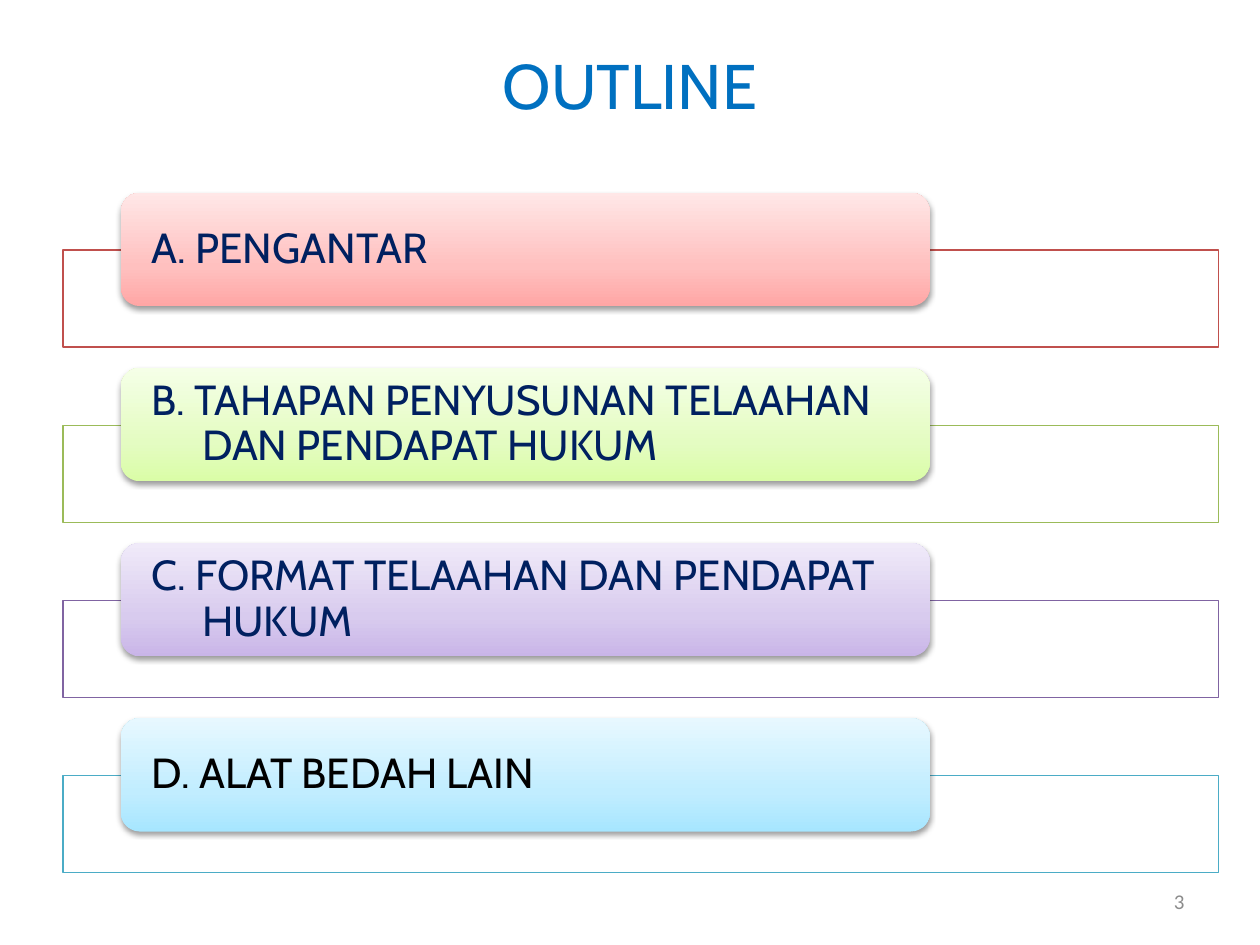
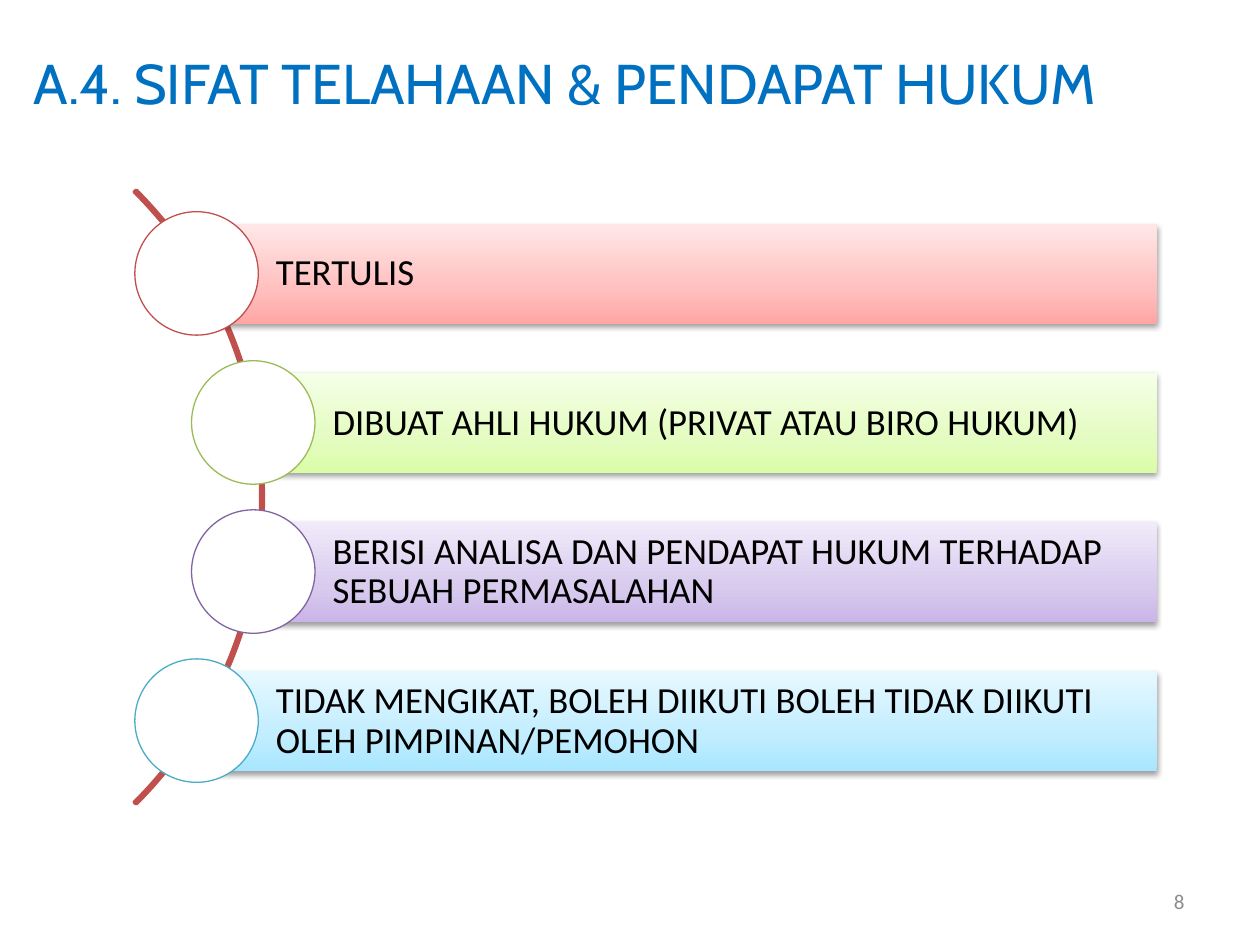
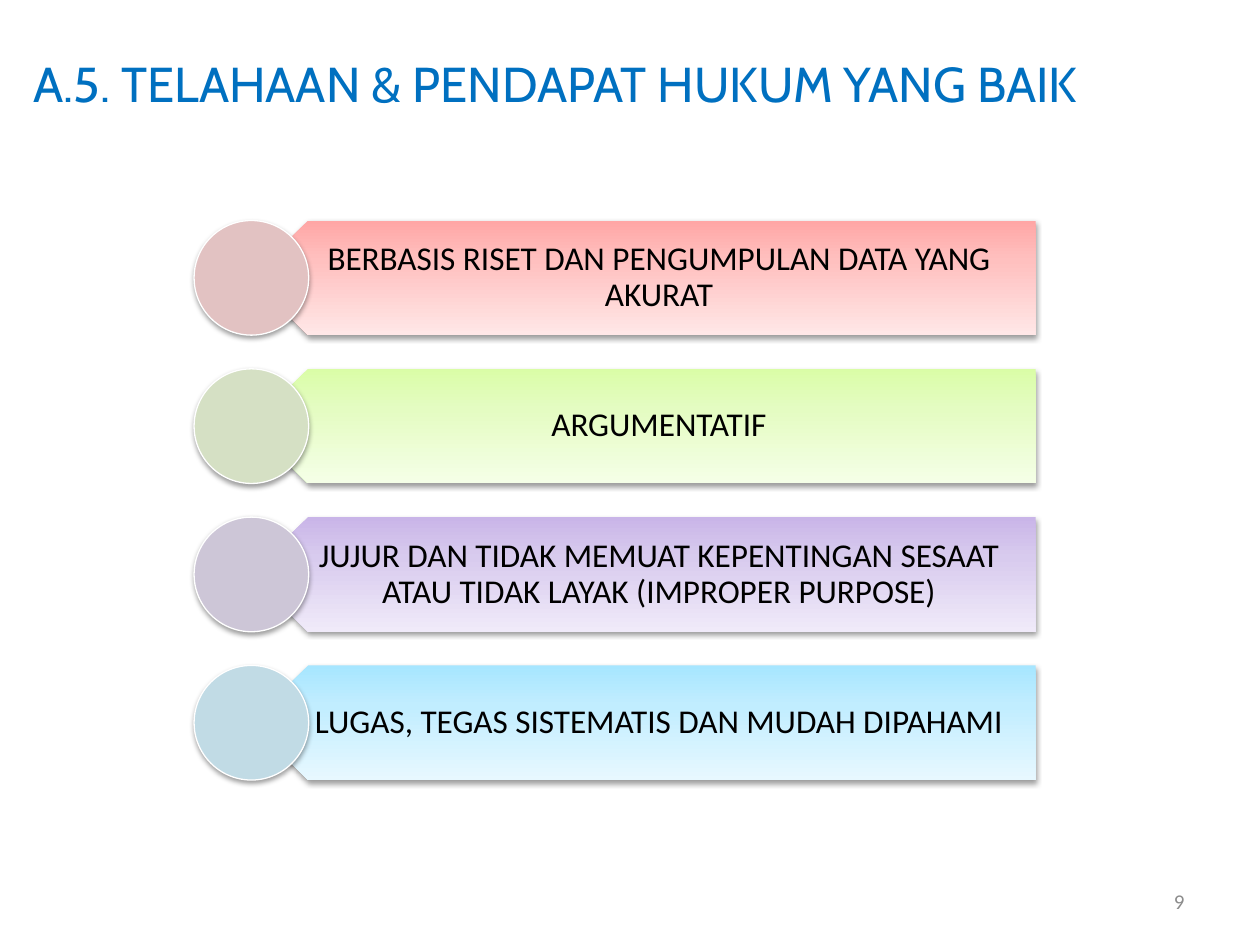
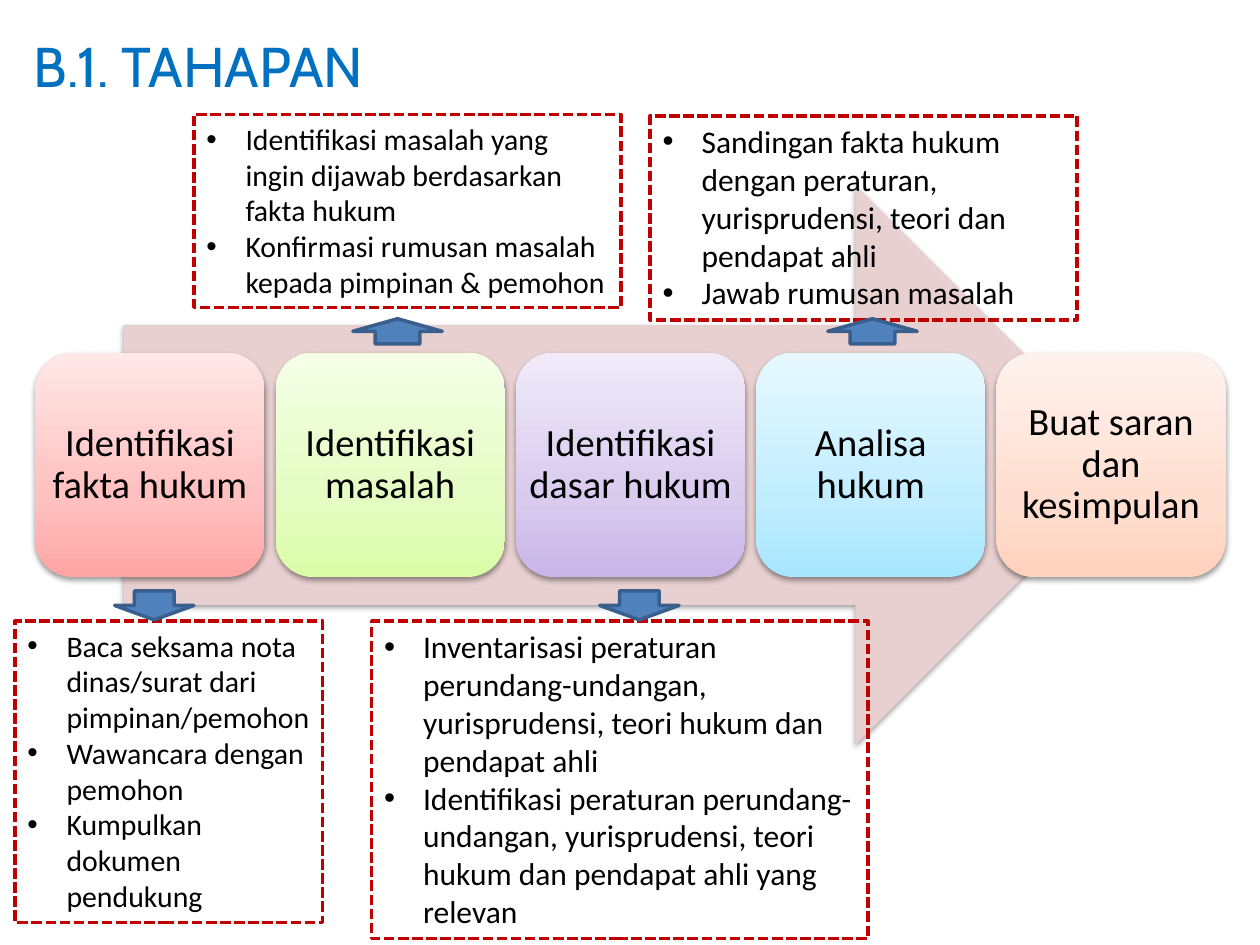
from dataclasses import dataclass

from pptx import Presentation
from pptx.dml.color import RGBColor
from pptx.enum.dml import MSO_LINE
from pptx.enum.shapes import MSO_SHAPE
from pptx.enum.text import MSO_ANCHOR, MSO_AUTO_SIZE, PP_ALIGN
from pptx.oxml import parse_xml
from pptx.oxml.ns import nsdecls, qn
from pptx.util import Inches, Pt


# Theme
@dataclass(frozen=True)
class Accent:
    line: str
    gradient: tuple
    tint: str = "FFFFFF"


@dataclass(frozen=True)
class Theme:
    heading_font: str = "Cabin"
    body_font: str = "Calibri"
    title: str = "0070C0"
    navy: str = "002060"
    black: str = "000000"
    white: str = "FFFFFF"
    gray: str = "8C8C8C"
    note_border: str = "C00000"
    arrow_fill: str = "4F81BD"
    arrow_line: str = "3A5F8C"
    process_arrow: str = "E8D0D0"
    title_large: int = 36
    title_medium: int = 32
    title_small: int = 28
    outline_size: int = 24
    step_size: int = 22
    trait_size: int = 21
    quality_size: int = 19
    note_size: int = 18
    note_small: int = 17
    number_size: int = 12
    thin: float = 0.75
    thick: float = 2
    accents: tuple = (
        Accent("C0504D", ("FFA6A5", "FFC0BF", "FFE7E7"), "E2C2C2"),
        Accent("9BBB59", ("DAFDA7", "E4FCC2", "F5FFE7"), "D5E0C4"),
        Accent("8064A2", ("C9B5E8", "D8CBEE", "F0EAF9"), "CDC6D7"),
        Accent("4BACC6", ("A7E6FF", "C1EDFF", "E7F8FF"), "C1DBE5"),
        Accent("F79646", ("FFD2BD", "FFDED0", "FFF2ED")),
    )


THEME = Theme()


def write_text(frame, lines, *, size, font=THEME.body_font, color=THEME.black,
               align=PP_ALIGN.LEFT, anchor=MSO_ANCHOR.MIDDLE, spacing=None,
               hanging=0, bullet=None, insets=(0.1, 0.05, 0.1, 0.05)):
    """Fill a text frame; lines is one string or a list, one per paragraph."""
    frame.word_wrap = True
    frame.vertical_anchor = anchor
    (frame.margin_left, frame.margin_top,
     frame.margin_right, frame.margin_bottom) = map(Inches, insets)
    lines = [lines] if isinstance(lines, str) else lines
    for index, line in enumerate(lines):
        paragraph = frame.add_paragraph() if index else frame.paragraphs[0]
        paragraph.alignment = align
        if spacing:
            paragraph.line_spacing = spacing
        properties = paragraph._p.get_or_add_pPr()
        if hanging:
            properties.set("marL", str(Inches(hanging)))
            properties.set("indent", str(-Inches(hanging)))
        if bullet:
            properties.append(parse_xml(
                f'<a:buFont {nsdecls("a")} typeface="Arial"/>'))
            properties.append(parse_xml(
                f'<a:buChar {nsdecls("a")} char="{bullet}"/>'))
        run = paragraph.add_run()
        run.text = line
        run.font.name = font
        run.font.size = Pt(size)
        run.font.color.rgb = RGBColor.from_string(color)


class Deck:
    """Holds the theme, the presentation and the current slide."""

    def __init__(self, theme):
        self.theme = theme
        self.presentation = Presentation()
        self.presentation.slide_width = Inches(10)
        self.presentation.slide_height = Inches(7.5)
        self.slide = None

    def new_slide(self, title, size, *, box=(0.17, 0.03, 9.56, 1.25),
                  align=PP_ALIGN.LEFT, number=None):
        layout = self.presentation.slide_layouts[6]
        self.slide = self.presentation.slides.add_slide(layout)
        self.text(box, title, size=size, font=self.theme.heading_font,
                  color=self.theme.title, align=align)
        if number:
            self.text((7.17, 6.95, 2.33, 0.4), number,
                      size=self.theme.number_size, color=self.theme.gray,
                      align=PP_ALIGN.RIGHT)

    def text(self, box, lines, **text_format):
        shape = self.slide.shapes.add_textbox(*map(Inches, box))
        write_text(shape.text_frame, lines, **text_format)
        return shape

    def shape(self, kind, box, *, fill=None, gradient=None, alpha=None,
              line=None, width=THEME.thin, shadow=False):
        shape = self.slide.shapes.add_shape(kind, *map(Inches, box))
        if gradient:
            self.set_gradient(shape, gradient)
        elif fill:
            shape.fill.solid()
            shape.fill.fore_color.rgb = RGBColor.from_string(fill)
            if alpha:
                color = shape.element.spPr.find(f'.//{qn("a:srgbClr")}')
                color.append(parse_xml(
                    f'<a:alpha {nsdecls("a")} val="{alpha * 1000}"/>'))
        else:
            shape.fill.background()
        if line:
            shape.line.color.rgb = RGBColor.from_string(line)
            shape.line.width = Pt(width)
        else:
            shape.line.fill.background()
        shape.shadow.inherit = False
        if shadow:
            self.set_shadow(shape)
        return shape

    def set_gradient(self, shape, colors):
        """Blend upwards from the first colour to the last."""
        stops = "".join(
            f'<a:gs pos="{position}"><a:srgbClr val="{color}"/></a:gs>'
            for position, color in zip((0, 35000, 100000), colors))
        geometry = shape.element.spPr.find(qn("a:prstGeom"))
        geometry.addnext(parse_xml(
            f'<a:gradFill {nsdecls("a")} rotWithShape="1">'
            f'<a:gsLst>{stops}</a:gsLst>'
            '<a:lin ang="16200000" scaled="0"/></a:gradFill>'))

    def set_shadow(self, shape):
        effects = shape.element.spPr.find(qn("a:effectLst"))
        effects.append(parse_xml(
            f'<a:outerShdw {nsdecls("a")} blurRad="{Pt(3.1)}" dist="{Pt(1.6)}" '
            'dir="5400000" rotWithShape="0"><a:srgbClr val="000000">'
            '<a:alpha val="38000"/></a:srgbClr></a:outerShdw>'))

    def card(self, kind, box, accent, text=None, **text_format):
        """Gradient shape with a soft shadow."""
        shape = self.shape(kind, box, gradient=accent.gradient, shadow=True)
        if text:
            write_text(shape.text_frame, text, spacing=0.9, **text_format)
        return shape

    def note(self, box, lines, size):
        """Dashed box with a bullet list."""
        shape = self.text(box, lines, size=size, anchor=MSO_ANCHOR.TOP,
                          hanging=0.31, bullet="•")
        shape.text_frame.auto_size = MSO_AUTO_SIZE.SHAPE_TO_FIT_TEXT
        shape.line.color.rgb = RGBColor.from_string(self.theme.note_border)
        shape.line.width = Pt(self.theme.thick)
        shape.line.dash_style = MSO_LINE.SQUARE_DOT

    def pointer(self, kind, box):
        self.shape(kind, box, fill=self.theme.arrow_fill,
                   line=self.theme.arrow_line, width=self.theme.thick)


# Slide: outline
def build_outline(deck):
    theme = deck.theme
    deck.new_slide("OUTLINE", theme.title_large, box=(0.5, 0.04, 9, 1.25),
                   align=PP_ALIGN.CENTER, number="3")
    chapters = [
        ("A. PENGANTAR", theme.navy),
        ("B. TAHAPAN PENYUSUNAN TELAAHAN DAN PENDAPAT HUKUM", theme.navy),
        ("C. FORMAT TELAAHAN DAN PENDAPAT HUKUM", theme.navy),
        ("D. ALAT BEDAH LAIN", theme.black),
    ]
    for index, (chapter, color) in enumerate(chapters):
        accent = theme.accents[index]
        top = 1.53 + 1.39 * index
        deck.shape(MSO_SHAPE.RECTANGLE, (0.5, top + 0.455, 9.17, 0.77),
                   fill=theme.white, alpha=90, line=accent.line)
        deck.card(MSO_SHAPE.ROUNDED_RECTANGLE, (0.96, top, 6.42, 0.9), accent,
                  chapter, size=theme.outline_size, font=theme.heading_font,
                  color=color, hanging=0.4, insets=(0.2, 0, 0.2, 0))


# Slide: traits along an arc
def build_traits(deck):
    theme = deck.theme
    deck.new_slide("A.4. SIFAT TELAHAAN & PENDAPAT HUKUM", theme.title_medium,
                   number="8")
    arc = deck.shape(MSO_SHAPE.BLOCK_ARC, (-4.8, 0.5, 6.89, 6.89),
                     line=theme.accents[0].line, width=theme.thick)
    for index, value in enumerate((189, 27, 0.003)):
        arc.adjustments[index] = value
    traits = [
        (1.56, "TERTULIS"),
        (2.01, "DIBUAT AHLI HUKUM (PRIVAT ATAU BIRO HUKUM)"),
        (2.01, "BERISI ANALISA DAN PENDAPAT HUKUM TERHADAP SEBUAH PERMASALAHAN"),
        (1.56, "TIDAK MENGIKAT, BOLEH DIIKUTI BOLEH TIDAK DIIKUTI OLEH "
               "PIMPINAN/PEMOHON"),
    ]
    right, diameter = 9.18, 0.98
    for index, (left, trait) in enumerate(traits):
        accent = theme.accents[index]
        top = 1.78 + 1.183 * index
        deck.card(MSO_SHAPE.RECTANGLE, (left, top, right - left, 0.79), accent,
                  trait, size=theme.trait_size, insets=(0.63, 0.06, 0.06, 0.06))
        deck.shape(MSO_SHAPE.OVAL,
                   (left - diameter / 2, top - 0.1, diameter, diameter),
                   fill=theme.white, line=accent.line)


# Slide: qualities
def build_qualities(deck):
    theme = deck.theme
    deck.new_slide("A.5. TELAHAAN & PENDAPAT HUKUM YANG BAIK",
                   theme.title_small, number="9")
    qualities = [
        "BERBASIS RISET DAN PENGUMPULAN DATA YANG AKURAT",
        "ARGUMENTATIF",
        "JUJUR DAN TIDAK MEMUAT KEPENTINGAN SESAAT ATAU TIDAK LAYAK "
        "(IMPROPER PURPOSE)",
        "LUGAS, TEGAS SISTEMATIS DAN MUDAH DIPAHAMI",
    ]
    height = 0.91
    for index, quality in enumerate(qualities):
        accent = theme.accents[index]
        top = 1.75 + 1.177 * index
        box = (1.99, top, 6.23, height)
        deck.card(MSO_SHAPE.PENTAGON, box, accent).rotation = 180
        # The label stays upright over the turned shape
        deck.text(box, quality, size=theme.quality_size, align=PP_ALIGN.CENTER,
                  spacing=0.9, insets=(0.4, 0.08, 0.15, 0.08))
        deck.shape(MSO_SHAPE.OVAL, (1.54, top, height, height),
                   fill=accent.tint, line=theme.white, shadow=True)


# Slide: process steps with notes
def build_steps(deck):
    theme = deck.theme
    deck.new_slide("B.1. TAHAPAN", theme.title_medium,
                   box=(0.17, -0.11, 9.32, 1.25))
    deck.shape(MSO_SHAPE.RIGHT_ARROW, (0.98, 1.47, 8.03, 4.44),
               fill=theme.process_arrow, shadow=True)
    steps = ["Identifikasi fakta hukum", "Identifikasi masalah",
             "Identifikasi dasar hukum", "Analisa hukum",
             "Buat saran dan kesimpulan"]
    for index, step in enumerate(steps):
        deck.card(MSO_SHAPE.ROUNDED_RECTANGLE,
                  (0.28 + 1.907 * index, 2.8, 1.82, 1.78),
                  theme.accents[index], step, size=theme.step_size,
                  align=PP_ALIGN.CENTER, insets=(0, 0, 0, 0))

    # Notes and the arrows that lead to them
    down, up = MSO_SHAPE.DOWN_ARROW, MSO_SHAPE.UP_ARROW
    notes = [
        ((0.12, 4.93, 2.44, 2.39), theme.note_small,
         ["Baca seksama nota dinas/surat dari pimpinan/pemohon",
          "Wawancara dengan pemohon",
          "Kumpulkan dokumen pendukung"],
         down, (0.91, 4.69, 0.63, 0.23)),
        ((1.54, 0.91, 3.39, 1.53), theme.note_small,
         ["Identifikasi masalah yang ingin dijawab berdasarkan fakta hukum",
          "Konfirmasi rumusan masalah kepada pimpinan & pemohon"],
         up, (2.8, 2.53, 0.71, 0.2)),
        ((2.95, 4.93, 3.94, 2.52), theme.note_size,
         ["Inventarisasi peraturan perundang-undangan, yurisprudensi, teori "
          "hukum dan pendapat ahli",
          "Identifikasi peraturan perundang-undangan, yurisprudensi, teori "
          "hukum dan pendapat ahli yang relevan"],
         down, (4.76, 4.69, 0.63, 0.23)),
        ((5.16, 0.92, 3.39, 1.62), theme.note_size,
         ["Sandingan fakta hukum dengan peraturan, yurisprudensi, teori dan "
          "pendapat ahli",
          "Jawab rumusan masalah"],
         up, (6.57, 2.53, 0.71, 0.2)),
    ]
    for note_box, size, lines, arrow, arrow_box in notes:
        deck.note(note_box, lines, size)
        deck.pointer(arrow, arrow_box)


def main():
    deck = Deck(THEME)
    build_outline(deck)
    build_traits(deck)
    build_qualities(deck)
    build_steps(deck)
    deck.presentation.save("out.pptx")


if __name__ == "__main__":
    main()
